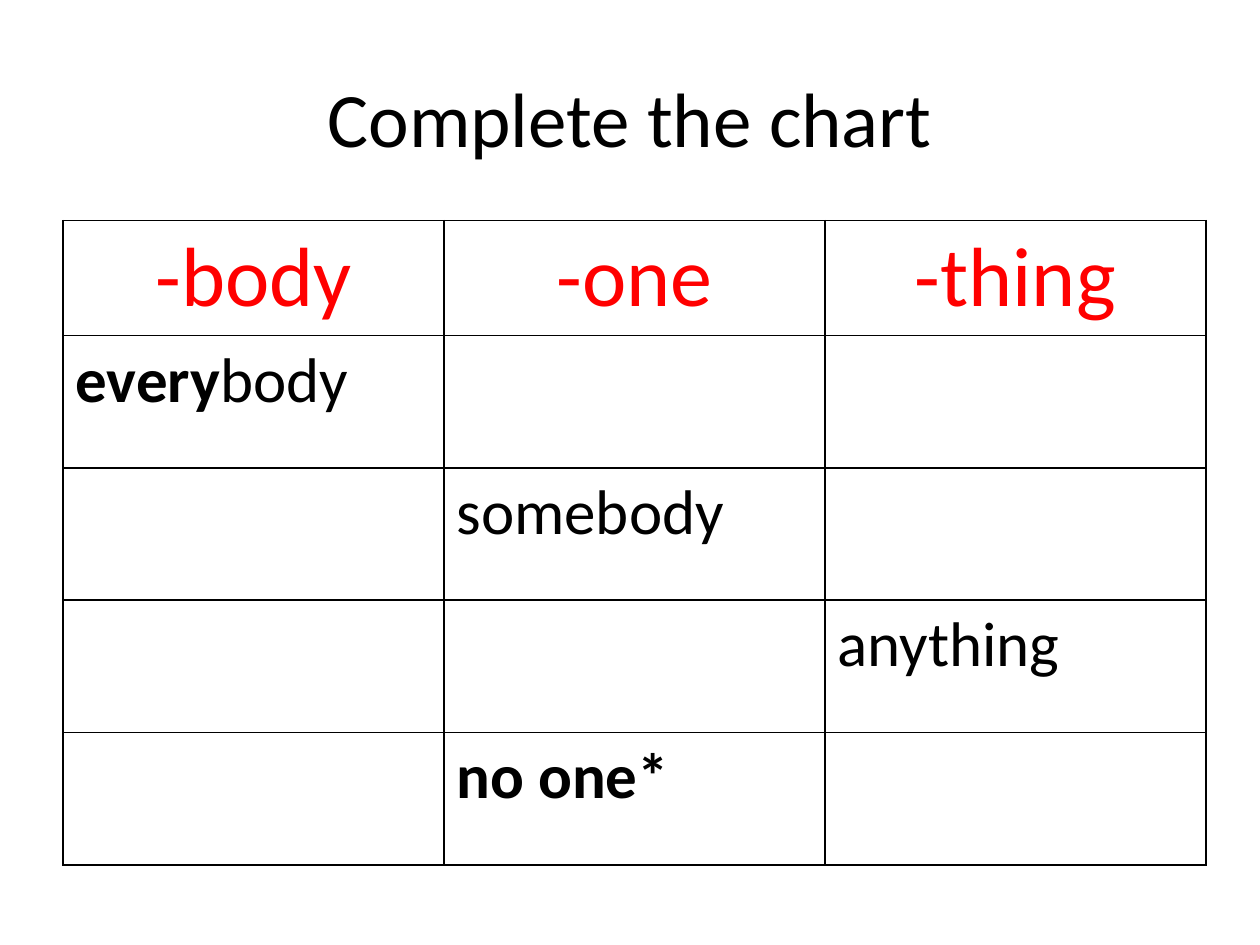
"""Build the "Complete the chart" slide of indefinite pronouns."""
from dataclasses import dataclass

from lxml.etree import SubElement
from pptx import Presentation
from pptx.dml.color import RGBColor
from pptx.enum.text import MSO_ANCHOR as Anchor, PP_ALIGN as Align
from pptx.oxml.ns import qn
from pptx.util import Inches, Pt


@dataclass(frozen=True)
class Theme:
    font: str = "Calibri"
    ink: str = "000000"
    accent: str = "FF0000"
    paper: str = "FFFFFF"
    title_size: int = 44
    header_size: int = 48
    body_size: int = 36
    border: int = 1


theme = Theme()


def add_run(paragraph, text, size, color, bold=False):
    run = paragraph.add_run()
    run.text = text
    run.font.name = theme.font
    run.font.size = Pt(size)
    run.font.bold = bold
    run.font.color.rgb = RGBColor.from_string(color)


def add_borders(cell):
    properties = cell._tc.get_or_add_tcPr()
    for position, side in enumerate(("lnL", "lnR", "lnT", "lnB")):
        line = SubElement(properties, qn(f"a:{side}"), w=str(Pt(theme.border)))
        fill = SubElement(line, qn("a:solidFill"))
        SubElement(fill, qn("a:srgbClr"), val=theme.ink)
        properties.insert(position, line)


deck = Presentation()
deck.slide_width, deck.slide_height = Inches(10), Inches(7.5)
slide = deck.slides.add_slide(deck.slide_layouts[5])

title = slide.shapes.title
title.left, title.top = Inches(0.5), Inches(0.3)
title.width, title.height = Inches(9), Inches(1.25)
title.text_frame.vertical_anchor = Anchor.MIDDLE
heading = title.text_frame.paragraphs[0]
heading.alignment = Align.CENTER
add_run(heading, "Complete the chart", theme.title_size, theme.ink)

endings = ["-body", "-one", "-thing"]
answers = {
    (1, 0): [("every", True), ("body", False)],
    (2, 1): [("somebody", False)],
    (3, 2): [("anything", False)],
    (4, 1): [("no one*", True)],
}
row_heights = [0.91] + [1.05] * 4

pronouns = slide.shapes.add_table(
    len(row_heights), len(endings),
    Inches(0.5), Inches(1.75), Inches(9.07), Inches(sum(row_heights)),
).table
pronouns.first_row = False
pronouns.horz_banding = False
for row, height in zip(pronouns.rows, row_heights):
    row.height = Inches(height)

for cell in pronouns.iter_cells():
    cell.fill.solid()
    cell.fill.fore_color.rgb = RGBColor.from_string(theme.paper)
    add_borders(cell)

for column, ending in enumerate(endings):
    header = pronouns.cell(0, column).text_frame.paragraphs[0]
    header.alignment = Align.CENTER
    add_run(header, ending, theme.header_size, theme.accent)

for position, parts in answers.items():
    answer = pronouns.cell(*position).text_frame.paragraphs[0]
    for text, bold in parts:
        add_run(answer, text, theme.body_size, theme.ink, bold)

deck.save("out.pptx")
